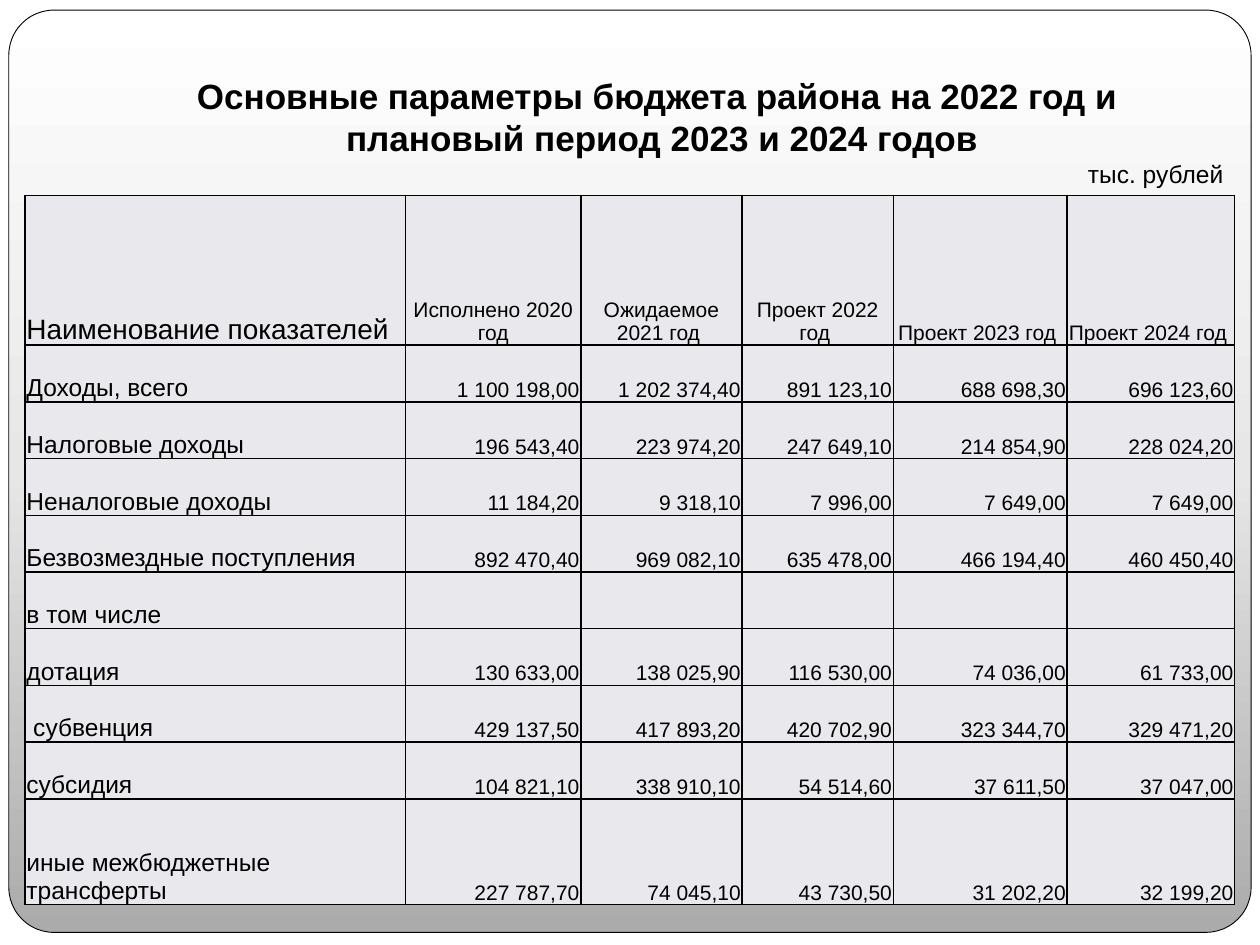
"""Build a slide with the main parameters of the district budget."""
from lxml import etree
from pptx import Presentation
from pptx.dml.color import RGBColor
from pptx.enum.shapes import MSO_SHAPE
from pptx.enum.text import MSO_ANCHOR, MSO_AUTO_SIZE, PP_ALIGN
from pptx.oxml.ns import qn
from pptx.util import Inches, Pt

LEFT, CENTER, RIGHT = PP_ALIGN.LEFT, PP_ALIGN.CENTER, PP_ALIGN.RIGHT
MIDDLE, BOTTOM = MSO_ANCHOR.MIDDLE, MSO_ANCHOR.BOTTOM
GROW = MSO_AUTO_SIZE.SHAPE_TO_FIT_TEXT
ROUNDED = MSO_SHAPE.ROUNDED_RECTANGLE
BLACK = RGBColor(0, 0, 0)
WHITE = RGBColor(255, 255, 255)
CELL_GREY = RGBColor(0xE9, 0xE9, 0xED)
PANEL_STOPS = [
    (0, RGBColor(0xAB, 0xAB, 0xAB)),
    (50, RGBColor(0xE7, 0xE7, 0xE7)),
    (100, WHITE),
]
FONT = "Arial"

TITLE = [
    ("Основные параметры бюджета района на 2022 год и ", CENTER, 20, True),
    ("плановый период 2023 и 2024 годов", CENTER, 20, True),
    ("тыс. рублей", RIGHT, 14, False),
]
ROWS = [
    ("Наименование показателей", "Исполнено 2020 год", "Ожидаемое 2021 год ",
     "Проект 2022 год ", "Проект 2023 год ", "Проект 2024 год "),
    ("Доходы, всего", "1 100 198,00", "1 202 374,40", "891 123,10", "688 698,30", "696 123,60"),
    ("Налоговые доходы", "196 543,40", "223 974,20", "247 649,10", "214 854,90", "228 024,20"),
    ("Неналоговые доходы", "11 184,20", "9 318,10", "7 996,00", "7 649,00", "7 649,00"),
    ("Безвозмездные поступления", "892 470,40", "969 082,10", "635 478,00", "466 194,40",
     "460 450,40"),
    ("в том числе", "", "", "", "", ""),
    ("дотация", "130 633,00", "138 025,90", "116 530,00", "74 036,00", "61 733,00"),
    (" субвенция", "429 137,50", "417 893,20", "420 702,90", "323 344,70", "329 471,20"),
    ("субсидия", "104 821,10", "338 910,10", "54 514,60", "37 611,50", "37 047,00"),
    ("иные межбюджетные трансферты", "227 787,70", "74 045,10", "43 730,50", "31 202,20",
     "32 199,20"),
]
COLUMN_WIDTHS = [3.02, 1.39, 1.28, 1.2, 1.38, 1.33]
ROW_HEIGHTS = [1.19] + [0.45] * 8 + [0.84]
MARGIN_LEFT, CONTENT_WIDTH = 0.2, 9.61


def style_paragraph(para, align, size, bold=False):
    para.alignment = align
    para.font.name = FONT
    para.font.size = Pt(size)
    para.font.bold = bold
    para.font.color.rgb = BLACK


def add_panel(page):
    panel = page.shapes.add_shape(ROUNDED, Inches(0.07), Inches(0.08), Inches(9.86), Inches(7.32))
    panel.adjustments[0] = 0.049
    panel.shadow.inherit = False
    panel.line.color.rgb = BLACK
    panel.line.width = Pt(0.5)
    panel.fill.gradient()
    panel.fill.gradient_angle = 90
    stops = next(panel.element.iter(qn("a:gsLst")))
    for stop in list(stops):
        stops.remove(stop)
    for position, color in PANEL_STOPS:
        stop = etree.SubElement(stops, qn("a:gs"), pos=str(position * 1000))
        etree.SubElement(stop, qn("a:srgbClr"), val=str(color))
    page.shapes.title.element.addprevious(panel.element)


def fill_title(title):
    title.left, title.top = Inches(MARGIN_LEFT), Inches(0.54)
    title.width, title.height = Inches(CONTENT_WIDTH), Inches(1.01)
    frame = title.text_frame
    frame.text = "\n".join(text for text, *_ in TITLE)
    frame.word_wrap = True
    frame.auto_size = GROW
    frame.vertical_anchor = MIDDLE
    for para, (_, align, size, bold) in zip(frame.paragraphs, TITLE):
        style_paragraph(para, align, size, bold)
        para._p.get_or_add_pPr().set("indent", str(Inches(0.5)))


def add_borders(cell):
    properties = cell._tc.get_or_add_tcPr()
    for side in ("lnL", "lnR", "lnT", "lnB"):
        line = etree.SubElement(properties, qn(f"a:{side}"), w=str(Pt(1)))
        fill = etree.SubElement(line, qn("a:solidFill"))
        etree.SubElement(fill, qn("a:srgbClr"), val=str(BLACK))


def cell_style(row, column):
    if column == 0:
        return LEFT, 16 if row == 0 else 14
    return CENTER if row == 0 else RIGHT, 12


def add_budget_table(page):
    table = page.shapes.add_table(
        len(ROWS), len(COLUMN_WIDTHS), Inches(MARGIN_LEFT), Inches(1.55),
        Inches(CONTENT_WIDTH), Inches(sum(ROW_HEIGHTS))).table
    for column, width in zip(table.columns, COLUMN_WIDTHS):
        column.width = Inches(width)
    for row, height in zip(table.rows, ROW_HEIGHTS):
        row.height = Inches(height)
    for row, texts in enumerate(ROWS):
        for column, text in enumerate(texts):
            cell = table.cell(row, column)
            cell.text = text
            cell.vertical_anchor = BOTTOM
            cell.margin_left = cell.margin_right = cell.margin_top = Inches(0.01)
            cell.margin_bottom = 0
            add_borders(cell)
            cell.fill.solid()
            cell.fill.fore_color.rgb = CELL_GREY
            style_paragraph(cell.text_frame.paragraphs[0], *cell_style(row, column))


def main():
    deck = Presentation()
    deck.slide_width, deck.slide_height = Inches(10), Inches(7.5)
    page = deck.slides.add_slide(deck.slide_layouts[5])
    page.background.fill.solid()
    page.background.fill.fore_color.rgb = WHITE
    add_panel(page)
    fill_title(page.shapes.title)
    add_budget_table(page)
    deck.save("out.pptx")


if __name__ == "__main__":
    main()
